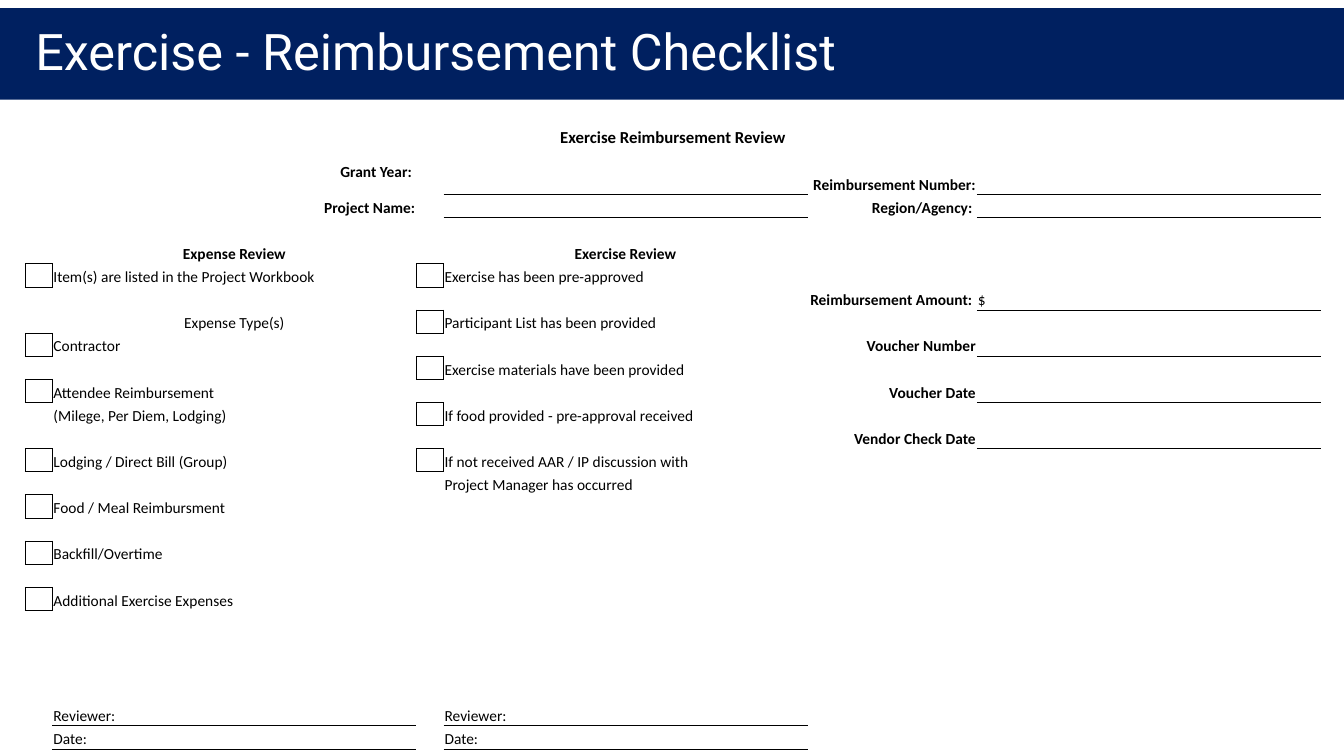
"""Build the exercise reimbursement checklist slide."""
from dataclasses import dataclass

from lxml import etree
from pptx import Presentation
from pptx.dml.color import RGBColor
from pptx.enum.shapes import MSO_SHAPE
from pptx.enum.text import MSO_ANCHOR, PP_ALIGN
from pptx.oxml.ns import qn
from pptx.slide import Slide
from pptx.table import Table, _Cell
from pptx.util import Inches, Pt

NAVY = RGBColor(0x00, 0x20, 0x60)
WHITE = RGBColor(0xFF, 0xFF, 0xFF)
BLACK = RGBColor(0x00, 0x00, 0x00)
RECTANGLE = MSO_SHAPE.RECTANGLE
LEFT, CENTER, RIGHT = PP_ALIGN.LEFT, PP_ALIGN.CENTER, PP_ALIGN.RIGHT
MIDDLE, BOTTOM = MSO_ANCHOR.MIDDLE, MSO_ANCHOR.BOTTOM

ROW_COUNT = 26
COLUMN_WIDTHS = (0.27, 3.61, 0.27, 3.61, 1.68, 3.41)
HEADING_HEIGHT, GRANT_HEIGHT, FORM_HEIGHT = 0.24, 0.46, 6.2
LINE_HEIGHT = (FORM_HEIGHT - HEADING_HEIGHT - GRANT_HEIGHT) / (ROW_COUNT - 2)
EXPENSE, EXERCISE, LABEL, ANSWER = 1, 3, 4, 5
BORDER_WIDTH = Pt(0.5)


@dataclass(frozen=True)
class Entry:
    """Text of one form cell."""
    row: int
    column: int
    text: str
    align: PP_ALIGN = LEFT
    bold: bool = False
    size: int = 11
    anchor: MSO_ANCHOR = BOTTOM


CHECK_ITEMS = (
    Entry(5, EXPENSE, "Item(s) are listed in the Project Workbook"),
    Entry(8, EXPENSE, "Contractor"),
    Entry(10, EXPENSE, "Attendee Reimbursement"),
    Entry(13, EXPENSE, "Lodging / Direct Bill (Group)"),
    Entry(15, EXPENSE, "Food / Meal Reimbursment"),
    Entry(17, EXPENSE, "Backfill/Overtime"),
    Entry(19, EXPENSE, "Additional Exercise Expenses"),
    Entry(5, EXERCISE, "Exercise has been pre-approved"),
    Entry(7, EXERCISE, "Participant List has been provided"),
    Entry(9, EXERCISE, "Exercise materials have been provided"),
    Entry(11, EXERCISE, "If food provided - pre-approval received"),
    Entry(13, EXERCISE, "If not received AAR / IP discussion with"),
)
FIELD_LABELS = (
    Entry(1, EXPENSE, "Grant Year: ", RIGHT, True, anchor=MIDDLE),
    Entry(2, EXPENSE, "Project Name:", RIGHT, True),
    Entry(1, LABEL, "Reimbursement Number:", RIGHT, True),
    Entry(2, LABEL, "Region/Agency: ", RIGHT, True),
    Entry(5, LABEL, "Reimbursement Amount: ", RIGHT, True),
    Entry(8, LABEL, "Voucher Number", RIGHT, True),
    Entry(10, LABEL, "Voucher Date", RIGHT, True),
    Entry(12, LABEL, "Vendor Check Date", RIGHT, True),
)
OTHER_TEXT = (
    Entry(0, 0, "Exercise Reimbursement Review", CENTER, True, 12),
    Entry(4, EXPENSE, "Expense Review", CENTER, True),
    Entry(4, EXERCISE, "Exercise Review", CENTER, True),
    Entry(7, EXPENSE, "Expense Type(s)", CENTER),
    Entry(11, EXPENSE, "(Milege, Per Diem, Lodging)"),
    Entry(14, EXERCISE, "Project Manager has occurred"),
    Entry(6, ANSWER, "$"),
)
SIGN_OFFS = tuple(
    Entry(row, column, text)
    for column in (EXPENSE, EXERCISE)
    for row, text in ((24, "Reviewer:"), (25, "Date:"))
)
UNDERLINED_ROWS = {
    EXPENSE: (24, 25),
    EXERCISE: (1, 2, 24, 25),
    ANSWER: (1, 2, 6, 8, 10, 12),
}


def find_borders() -> set[tuple[int, int, str]]:
    """Return the ruled sides of cells, each shared edge on both its cells."""
    borders = set()
    for item in CHECK_ITEMS:
        row, box = item.row, item.column - 1
        borders |= {(row, box, side) for side in "LRTB"}
        borders |= {(row - 1, box, "B"), (row + 1, box, "T"),
                    (row, box - 1, "R"), (row, box + 1, "L")}
    for column, rows in UNDERLINED_ROWS.items():
        for row in rows:
            borders |= {(row, column, "B"), (row + 1, column, "T")}
    return borders


def draw_border(cell: _Cell, side: str, ruled: bool) -> None:
    """Rule one side of a cell, or leave it clear."""
    properties = cell._tc.get_or_add_tcPr()
    line = etree.SubElement(properties, qn(f"a:ln{side}"), w=str(BORDER_WIDTH))
    if ruled:
        fill = etree.SubElement(line, qn("a:solidFill"))
        etree.SubElement(fill, qn("a:srgbClr"), val=str(BLACK))
    else:
        etree.SubElement(line, qn("a:noFill"))


def format_cell(cell: _Cell, entry: Entry) -> None:
    """Write an entry into a cell and set its font and insets."""
    cell.margin_left = cell.margin_right = cell.margin_top = Inches(0.01)
    cell.margin_bottom = 0
    cell.vertical_anchor = entry.anchor
    paragraph = cell.text_frame.paragraphs[0]
    paragraph.alignment = entry.align
    font = paragraph.font
    font.name, font.size, font.bold = "Calibri", Pt(entry.size), entry.bold
    font.color.rgb = BLACK
    if entry.text:
        paragraph.add_run().text = entry.text
    else:
        etree.SubElement(paragraph._p, qn("a:endParaRPr"), sz=str(entry.size * 100))


def fill_form(form: Table) -> None:
    """Size the grid, then write and rule every cell."""
    form.first_row = form.horz_banding = False
    for column, width in zip(form.columns, COLUMN_WIDTHS):
        column.width = Inches(width)
    for row in form.rows:
        row.height = Inches(LINE_HEIGHT)
    form.rows[0].height = Inches(HEADING_HEIGHT)
    form.rows[1].height = Inches(GRANT_HEIGHT)
    form.cell(0, 0).merge(form.cell(0, ANSWER))
    form.cell(5, LABEL).merge(form.cell(6, LABEL))
    entries = {(entry.row, entry.column): entry
               for entry in CHECK_ITEMS + FIELD_LABELS + OTHER_TEXT + SIGN_OFFS}
    borders = find_borders()
    for row in range(ROW_COUNT):
        for column in range(len(COLUMN_WIDTHS)):
            cell = form.cell(row, column)
            format_cell(cell, entries.get((row, column), Entry(row, column, "")))
            for side in "LRTB":
                draw_border(cell, side, (row, column, side) in borders)
            cell.fill.background()


def add_heading(slide: Slide) -> None:
    """Place the title over a navy band."""
    title = slide.shapes.title
    title.left, title.top = Inches(0.25), Inches(0.08)
    title.width, title.height = Inches(13.08), Inches(0.91)
    title.text_frame.text = "Exercise - Reimbursement Checklist"
    title.text_frame.vertical_anchor = MIDDLE
    paragraph = title.text_frame.paragraphs[0]
    paragraph.alignment = LEFT
    paragraph.line_spacing = 0.9
    paragraph.font.name, paragraph.font.size = "Roboto", Pt(36)
    paragraph.font.color.rgb = WHITE
    band = slide.shapes.add_shape(
        RECTANGLE, 0, title.top, Inches(13.33), title.height)
    band.shadow.inherit = False
    band.fill.solid()
    band.fill.fore_color.rgb = NAVY
    band.line.fill.background()
    title._element.addprevious(band._element)


def main() -> None:
    """Create and save the presentation."""
    presentation = Presentation()
    presentation.slide_width, presentation.slide_height = Inches(13.33), Inches(7.5)
    slide = presentation.slides.add_slide(presentation.slide_layouts[5])
    add_heading(slide)
    form = slide.shapes.add_table(
        ROW_COUNT, len(COLUMN_WIDTHS), Inches(0.25), Inches(1.23),
        Inches(sum(COLUMN_WIDTHS)), Inches(FORM_HEIGHT)).table
    fill_form(form)
    presentation.save("out.pptx")


if __name__ == "__main__":
    main()
